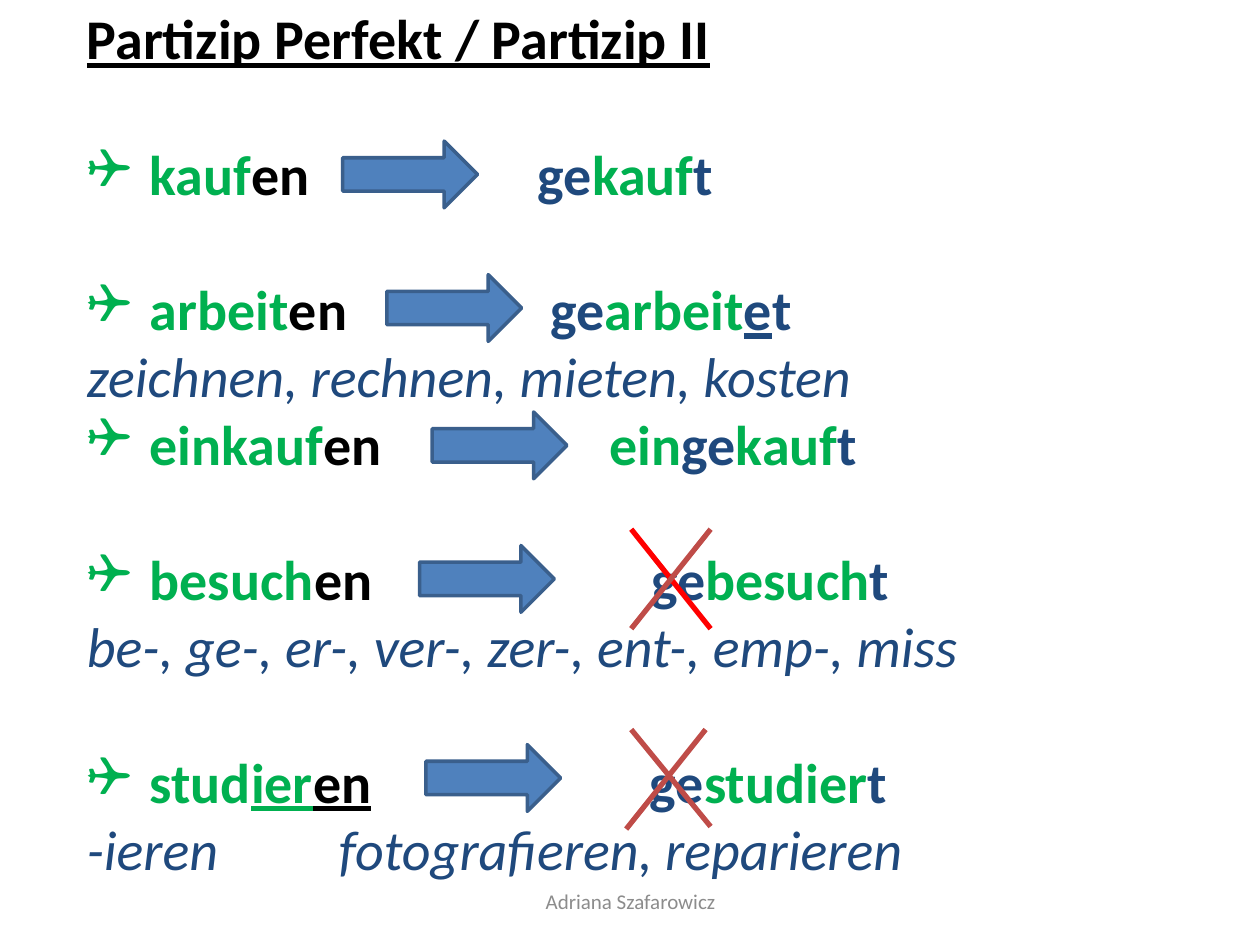
import pptx
import pptx.util
import pptx.dml.color
import pptx.enum.shapes
import pptx.enum.text
import pptx.oxml.ns
from lxml import etree

Inches, Pt = pptx.util.Inches, pptx.util.Pt

COLORS = {
    "ending": "000000", "stem": "00B050", "prefix": "1F497D",
    "arrow": "4F81BD", "arrow line": "3A5F8C",
    "red": "FF0000", "brick": "BF4C48", "footer": "8C8C8C",
}
SIZE = 32
BLANK_LINE = 39  # points: one line of the text size
INDENT = 0.5

TITLE = "Partizip Perfekt / Partizip II"
# Each verb: runs of the infinitive, runs of the participle (text, colour,
# underlined), tab position of the participle, a blank line before it?,
# and the line of further examples.
VERBS = [
    ([("kauf", "stem", False), ("en", "ending", False)],
     [("ge", "prefix", False), ("kauf", "stem", False), ("t", "prefix", False)],
     3.58, True, None),
    ([("arbeit", "stem", False), ("en", "ending", False)],
     [("ge", "prefix", False), ("arbeit", "stem", False),
      ("e", "prefix", True), ("t", "prefix", False)],
     3.68, True, "zeichnen, rechnen, mieten, kosten"),
    ([("einkauf", "stem", False), ("en", "ending", False)],
     [("ein", "stem", False), ("ge", "prefix", False),
      ("kauf", "stem", False), ("t", "prefix", False)],
     4.15, False, None),
    ([("besuch", "stem", False), ("en", "ending", False)],
     [("ge", "prefix", False), ("besuch", "stem", False), ("t", "prefix", False)],
     4.48, True, "be-, ge-, er-, ver-, zer-, ent-, emp-, miss"),
    ([("stud", "stem", False), ("ier", "stem", True), ("en", "ending", True)],
     [("ge", "prefix", False), ("studier", "stem", False), ("t", "prefix", False)],
     4.47, True, "-ieren\tfotografieren, reparieren"),
]
EXAMPLE_TAB = 2
FOOTER = "Adriana Szafarowicz"

ARROW_SIZE = (1.07, 0.53)
ARROWS = [(2.72, 1.12), (3.07, 2.18), (3.43, 3.27), (3.33, 4.33), (3.38, 5.91)]
STROKES = [
    ((5.01, 4.2), (5.64, 4.99), "red"),
    ((5.64, 4.2), (5.01, 4.99), "brick"),
    ((5.6, 5.79), (4.97, 6.58), "brick"),
    ((5.64, 6.56), (5.01, 5.79), "brick"),
]


def rgb(name):
    return pptx.dml.color.RGBColor.from_string(COLORS[name])


def add_child(parent, tag, **attributes):
    return etree.SubElement(parent, pptx.oxml.ns.qn(tag), attributes)


def add_run(paragraph, text, color, size=SIZE, bold=False, italic=False, underline=False):
    run = paragraph.add_run()
    run.text = text
    font = run.font
    font.name, font.size = "Calibri", Pt(size)
    font.bold, font.italic, font.underline = bold, italic, underline
    font.color.rgb = rgb(color)


def add_tab_stop(paragraph, position):
    tabs = add_child(paragraph._p.get_or_add_pPr(), "a:tabLst")
    add_child(tabs, "a:tab", pos=str(Inches(position)), algn="l")


def add_bullet(paragraph):
    properties = paragraph._p.get_or_add_pPr()
    properties.set("marL", str(Inches(INDENT)))
    properties.set("indent", str(Inches(-INDENT)))
    add_child(properties, "a:buFont", typeface="Wingdings")
    add_child(properties, "a:buChar", char="❑")


def add_verb(frame, infinitive, participle, tab, gap, examples, space_after):
    paragraph = frame.add_paragraph()
    paragraph.space_before = Pt(BLANK_LINE if gap else 0)
    add_bullet(paragraph)
    add_tab_stop(paragraph, tab)
    for text, color, underline in infinitive:
        add_run(paragraph, text, color, bold=True, underline=underline)
    add_run(paragraph, "\t", "ending")
    for text, color, underline in participle:
        add_run(paragraph, text, color, bold=True, underline=underline)
    if examples:
        paragraph = frame.add_paragraph()
        paragraph.space_before = Pt(space_after)
        add_tab_stop(paragraph, EXAMPLE_TAB)
        add_run(paragraph, examples, "prefix", italic=True)


def add_text_box(slide, left, top, width, height):
    frame = slide.shapes.add_textbox(*map(Inches, (left, top, width, height))).text_frame
    frame.word_wrap = True
    return frame


def add_arrow(slide, left, top):
    arrow = slide.shapes.add_shape(
        pptx.enum.shapes.MSO_SHAPE.RIGHT_ARROW,
        *map(Inches, (left, top, *ARROW_SIZE)))
    arrow.shadow.inherit = False
    arrow.fill.solid()
    arrow.fill.fore_color.rgb = rgb("arrow")
    arrow.line.color.rgb = rgb("arrow line")
    arrow.line.width = Pt(2)


def add_stroke(slide, start, end, color):
    stroke = slide.shapes.add_connector(
        pptx.enum.shapes.MSO_CONNECTOR.STRAIGHT, *map(Inches, start + end))
    stroke.line.color.rgb = rgb(color)
    stroke.line.width = Pt(3)
    add_child(stroke._element.spPr, "a:effectLst")


def main():
    presentation = pptx.Presentation()
    presentation.slide_width, presentation.slide_height = Inches(10), Inches(7.5)
    slide = presentation.slides.add_slide(presentation.slide_layouts[6])

    frame = add_text_box(slide, 0.59, -0.02, 7.22, 7.1)
    add_run(frame.paragraphs[0], TITLE, "ending", bold=True, underline=True)
    for verb in VERBS:
        is_last = verb is VERBS[-1]
        add_verb(frame, *verb, space_after=0)

    for left, top in ARROWS:
        add_arrow(slide, left, top)
    for start, end, color in STROKES:
        add_stroke(slide, start, end, color)

    footer = add_text_box(slide, 3.42, 6.95, 3.17, 0.4)
    footer.vertical_anchor = pptx.enum.text.MSO_ANCHOR.MIDDLE
    footer.paragraphs[0].alignment = pptx.enum.text.PP_ALIGN.CENTER
    add_run(footer.paragraphs[0], FOOTER, "footer", size=12)

    presentation.save("out.pptx")


if __name__ == "__main__":
    main()
